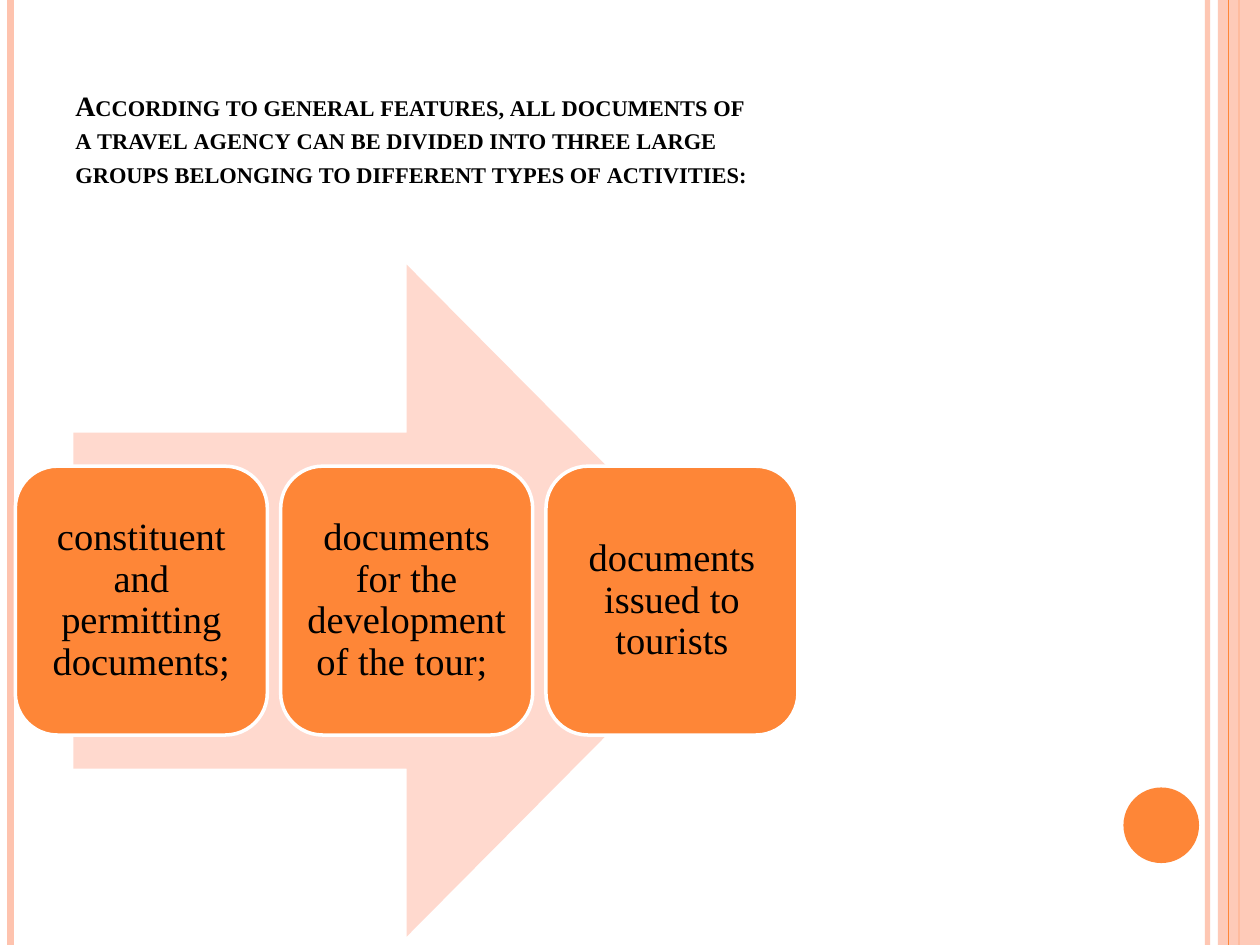
from lxml.etree import SubElement
from pptx import Presentation
from pptx.dml.color import RGBColor
from pptx.enum.shapes import MSO_CONNECTOR, MSO_SHAPE
from pptx.enum.text import MSO_ANCHOR, PP_ALIGN
from pptx.oxml.ns import qn
from pptx.util import Pt

ORANGE = RGBColor(0xFE, 0x86, 0x37)
PEACH = RGBColor(0xFE, 0xC3, 0xAE)
PALE = RGBColor(0xFF, 0xD9, 0xCE)
WHITE = RGBColor(0xFF, 0xFF, 0xFF)
BLACK = RGBColor(0, 0, 0)
FONT = "Times New Roman"
WIDTH, HEIGHT = 720, 540

TITLE = ("According to general features, all documents of a travel agency can be "
         "divided into three large groups belonging to different types of activities:")
GROUPS = ["constituent and permitting documents;",
          "documents for the development of the tour; ",
          "documents issued to tourists"]


def set_alpha(sp, percent):
    """Make the first solid colour of a shape or line partly transparent."""
    color = next(sp._element.spPr.iter(qn("a:srgbClr")))
    SubElement(color, qn("a:alpha"), val=str(percent * 1000))


def add_solid(slide, kind, x, y, w, h, color):
    sp = slide.shapes.add_shape(kind, Pt(x), Pt(y), Pt(w), Pt(h))
    sp.shadow.inherit = False
    sp.fill.solid()
    sp.fill.fore_color.rgb = color
    sp.line.fill.background()
    return sp


def add_stripe(slide, x, color, width):
    """Draw a vertical line over the full slide height."""
    line = slide.shapes.add_connector(MSO_CONNECTOR.STRAIGHT, Pt(x), Pt(0), Pt(x), Pt(HEIGHT))
    line.line.color.rgb = color
    line.line.width = Pt(width)
    SubElement(line._element.spPr, qn("a:effectLst"))
    return line


def add_frame(slide):
    """Draw the stripes at both slide edges and the round page marker."""
    set_alpha(add_stripe(slide, 690, PEACH, 3), 93)
    add_stripe(slide, 6, PEACH, 4.5)
    add_stripe(slide, 708, ORANGE, 1.5)
    band = add_solid(slide, MSO_SHAPE.RECTANGLE, WIDTH - 24, 0, 24, HEIGHT, PEACH)
    set_alpha(band, 87)
    add_stripe(slide, 702, ORANGE, 0.75)
    add_solid(slide, MSO_SHAPE.OVAL, 642, 450, 43.2, 43.2, ORANGE)


def add_title(slide, x, y, w, h):
    tf = slide.shapes.add_textbox(Pt(x), Pt(y), Pt(w), Pt(h)).text_frame
    tf.word_wrap = True
    tf.vertical_anchor = MSO_ANCHOR.BOTTOM
    p = tf.paragraphs[0]
    r = p.add_run()
    r.text = TITLE
    r.font.name = FONT
    r.font.size = Pt(16)
    r.font.bold = True
    r.font.color.rgb = BLACK
    r.font._element.set("cap", "small")


def add_card(slide, x, y, w, h, text):
    sp = add_solid(slide, MSO_SHAPE.ROUNDED_RECTANGLE, x, y, w, h, ORANGE)
    sp.line.color.rgb = WHITE
    sp.line.width = Pt(2)
    tf = sp.text_frame
    tf.word_wrap = True
    tf.vertical_anchor = MSO_ANCHOR.MIDDLE
    tf.margin_left = tf.margin_right = tf.margin_top = tf.margin_bottom = Pt(6.5)
    p = tf.paragraphs[0]
    p.text = text
    p.alignment = PP_ALIGN.CENTER
    p.line_spacing = 0.9
    p.font.name = FONT
    p.font.size = Pt(22)
    p.font.color.rgb = BLACK


def add_process(slide, x, y, w, h):
    """Draw a wide arrow with one card per document group across its middle."""
    arrow_w, card_w, card_h = 381, 144, 153.6
    add_solid(slide, MSO_SHAPE.RIGHT_ARROW, x + (w - arrow_w) / 2, y, arrow_w, h, PALE)
    pitch = (w - card_w) / (len(GROUPS) - 1)
    for i, text in enumerate(GROUPS):
        add_card(slide, x + i * pitch, y + (h - card_h) / 2, card_w, card_h, text)


def main():
    prs = Presentation()
    prs.slide_width, prs.slide_height = Pt(WIDTH), Pt(HEIGHT)
    slide = prs.slides.add_slide(prs.slide_layouts[6])
    add_frame(slide)
    add_title(slide, 36, 21.6, 403.2, 90)
    add_process(slide, 8.8, 151.2, 447.2, 384)
    prs.save("out.pptx")


if __name__ == "__main__":
    main()
